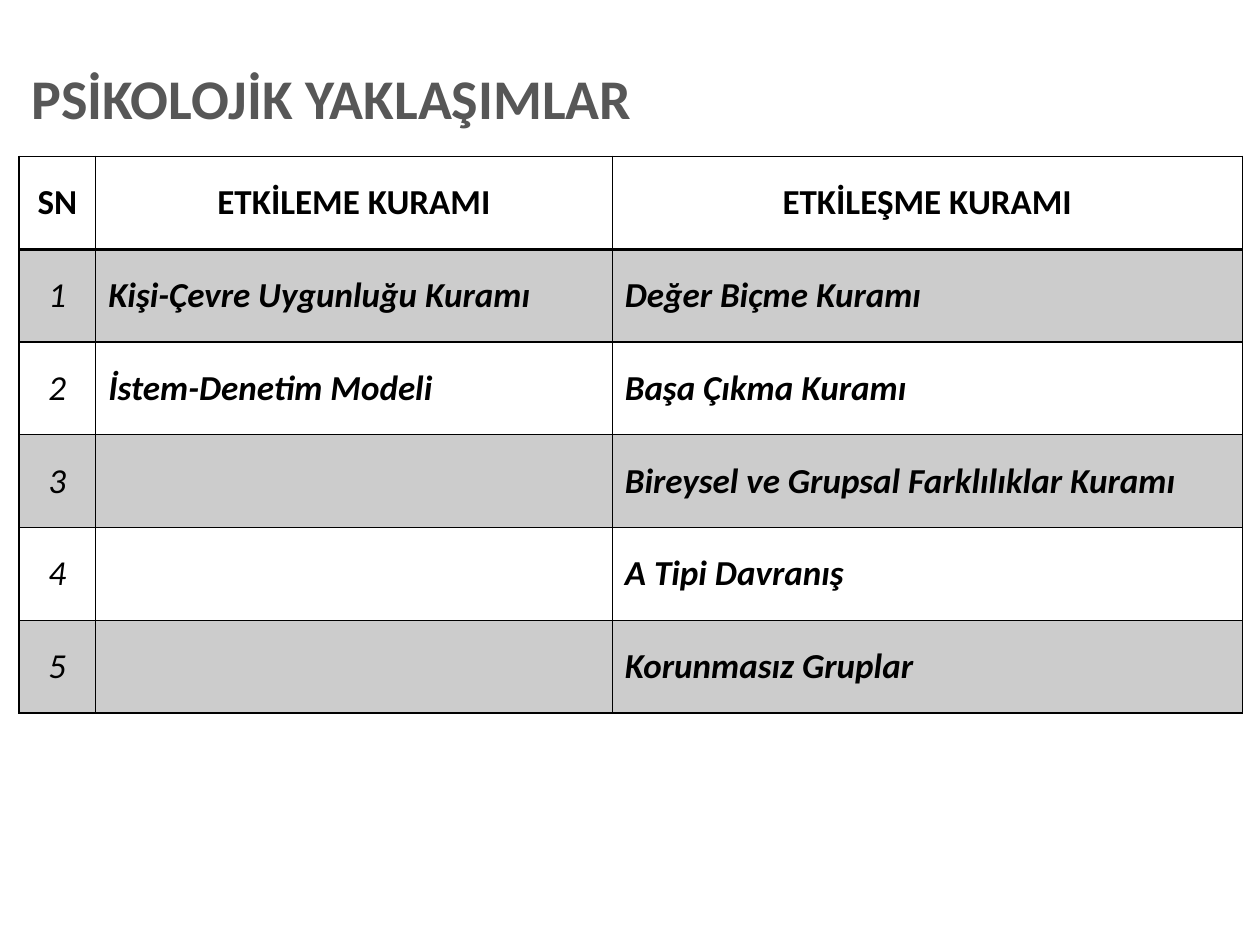
from lxml.etree import SubElement
from pptx import Presentation
from pptx.dml.color import RGBColor
from pptx.enum.text import MSO_ANCHOR, PP_ALIGN
from pptx.oxml.ns import qn
from pptx.util import Inches, Pt

COLORS = {"ink": "000000", "grey": "575757", "band": "CCCCCC",
          "white": "FFFFFF"}
HEADERS = ["SN", "ETKİLEME KURAMI", "ETKİLEŞME KURAMI"]
INFLUENCE = ["Kişi-Çevre Uygunluğu Kuramı", "İstem-Denetim Modeli", "", "", ""]
INTERACTION = ["Değer Biçme Kuramı", "Başa Çıkma Kuramı",
               "Bireysel ve Grupsal Farklılıklar Kuramı",
               "A Tipi Davranış", "Korunmasız Gruplar"]
COL_WIDTHS = [0.61, 4.1, 5]
TABLE_HEIGHT = 4.42


def color(name):
    return RGBColor.from_string(COLORS[name])


def add_run(p, text, color_name, **font):
    r = p.add_run()
    r.text = text
    for key, value in {"name": "Calibri", "bold": True, **font}.items():
        setattr(r.font, key, value)
    r.font.color.rgb = color(color_name)


def add_title(s, text):
    box = s.shapes.add_textbox(Inches(0.25), Inches(0.45),
                               Inches(9.64), Inches(0.71))
    tf = box.text_frame
    frame = {"word_wrap": True, "vertical_anchor": MSO_ANCHOR.MIDDLE,
             "margin_left": 0, "margin_right": 0,
             "margin_top": Inches(0.05), "margin_bottom": Inches(0.05)}
    for key, value in frame.items():
        setattr(tf, key, value)
    p = tf.paragraphs[0]
    p.line_spacing = 0.9
    add_run(p, text, "grey", size=Pt(32))


def set_borders(cell, widths):
    tcPr = cell._tc.get_or_add_tcPr()
    for i, (side, width) in enumerate(widths.items()):
        ln = SubElement(tcPr, qn(f"a:ln{side}"), w=str(Pt(width)))
        fill = SubElement(ln, qn("a:solidFill"))
        SubElement(fill, qn("a:srgbClr"), val=COLORS["ink"])
        tcPr.remove(ln)
        tcPr.insert(i, ln)


def fill_cell(cell, text, row, col):
    header = row == 0
    cell.vertical_anchor = MSO_ANCHOR.MIDDLE
    cell.fill.solid()
    cell.fill.fore_color.rgb = color("band" if row % 2 else "white")
    set_borders(cell, {"L": 1, "R": 1, "T": 2 if row == 1 else 1,
                       "B": 2 if header else 1})
    p = cell.text_frame.paragraphs[0]
    p.alignment = PP_ALIGN.CENTER if header or col == 0 else PP_ALIGN.LEFT
    if text:
        add_run(p, text, "ink", size=Pt(20), bold=header or col > 0,
                italic=not header)


def add_theory_table(s):
    numbers = [str(n) for n in range(1, len(INTERACTION) + 1)]
    rows = [HEADERS, *zip(numbers, INFLUENCE, INTERACTION)]
    table = s.shapes.add_table(
        len(rows), len(HEADERS), Inches(0.15), Inches(1.24),
        Inches(sum(COL_WIDTHS)), Inches(TABLE_HEIGHT)).table
    for column, width in zip(table.columns, COL_WIDTHS):
        column.width = Inches(width)
    for i, row in enumerate(rows):
        for j, text in enumerate(row):
            fill_cell(table.cell(i, j), text, i, j)


def main():
    prs = Presentation()
    prs.slide_width, prs.slide_height = Inches(10), Inches(7.5)
    s = prs.slides.add_slide(prs.slide_layouts[6])
    add_theory_table(s)
    add_title(s, "PSİKOLOJİK YAKLAŞIMLAR")
    prs.save("out.pptx")


if __name__ == "__main__":
    main()
